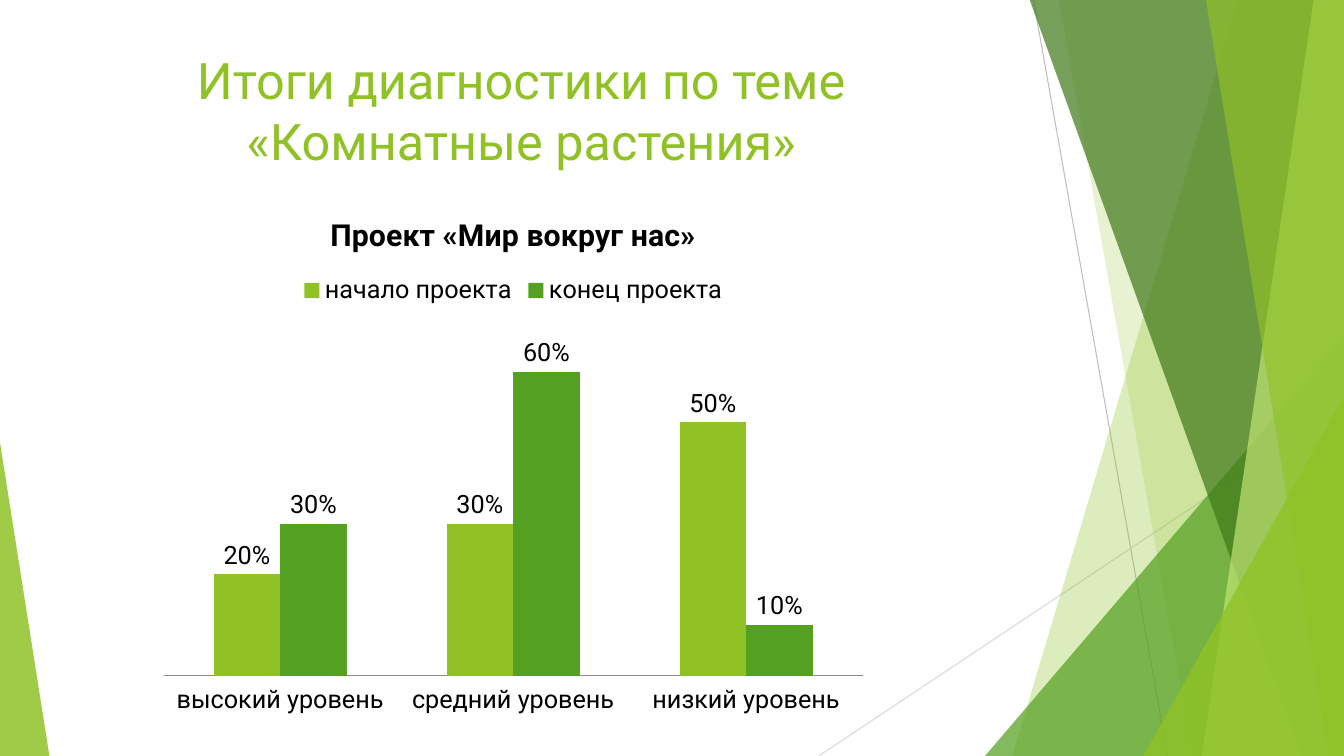
from dataclasses import dataclass

from lxml import etree
from pptx import Presentation
from pptx.chart.data import CategoryChartData
from pptx.dml.color import RGBColor
from pptx.enum.chart import (XL_CHART_TYPE, XL_LABEL_POSITION,
                             XL_LEGEND_POSITION, XL_TICK_LABEL_POSITION,
                             XL_TICK_MARK)
from pptx.enum.shapes import MSO_CONNECTOR, MSO_SHAPE
from pptx.enum.text import MSO_ANCHOR, PP_ALIGN
from pptx.oxml.ns import qn
from pptx.util import Pt

COLUMN = XL_CHART_TYPE.COLUMN_CLUSTERED
OUTSIDE = XL_LABEL_POSITION.OUTSIDE_END
LEGEND_TOP = XL_LEGEND_POSITION.TOP
NO_TICK = XL_TICK_MARK.NONE
LOW = XL_TICK_LABEL_POSITION.LOW
STRAIGHT = MSO_CONNECTOR.STRAIGHT
TRIANGLE = MSO_SHAPE.ISOSCELES_TRIANGLE
TOP = MSO_ANCHOR.TOP
CENTER = PP_ALIGN.CENTER

PX = 9144  # 100 px to the inch
WIDE, HIGH = 1333, 750


@dataclass(frozen=True)
class Theme:
    font: str = "Roboto"
    lime: str = "90C226"
    green: str = "54A021"
    forest: str = "3F7819"
    pale: str = "C0E474"
    black: str = "000000"
    axis: str = "8C8C8C"
    gray: str = "BFBFBF"
    light: str = "D9D9D9"
    title: float = 36
    head: float = 21.6
    body: float = 18
    hair: float = 0.75


THEME = Theme()


def rgb(code):
    return RGBColor.from_string(code)


def style(font, size, color, bold=False):
    font.name, font.size, font.bold = THEME.font, Pt(size), bold
    font.color.rgb = rgb(color)


def write(frame, text, size, color, bold=False, align=CENTER):
    para = frame.paragraphs[0]
    para.alignment = align
    run = para.add_run()
    run.text = text
    style(run.font, size, color, bold)


def paint(shape, color, alpha):
    shape.shadow.inherit = False
    shape.line.fill.background()
    shape.fill.solid()
    shape.fill.fore_color.rgb = rgb(color)
    tint = shape.fill._xPr.find(".//" + qn("a:srgbClr"))
    etree.SubElement(tint, qn("a:alpha"), val=str(alpha * 1000))


def draw_line(slide, start, end, color):
    line = slide.shapes.add_connector(STRAIGHT, *(v * PX for v in start + end))
    line.line.color.rgb = rgb(color)
    line.line.width = Pt(THEME.hair)
    etree.SubElement(line._element.spPr, qn("a:effectLst"))


def draw_band(slide, box, top, foot, color, alpha):
    """Full-height band from a slanted left edge to the right of the box."""
    left, head, width, height = box
    right, base = left + width, head + height
    pen = slide.shapes.build_freeform(left + top, head, scale=PX)
    pen.add_line_segments([(right, head), (right, base), (left + foot, base)])
    paint(pen.convert_to_shape(), color, alpha)


def draw_wedge(slide, box, apex, color, alpha):
    wedge = slide.shapes.add_shape(TRIANGLE, *(v * PX for v in box))
    wedge.adjustments[0] = apex
    paint(wedge, color, alpha)


def add_decor(slide, box):
    left, top, width, height = box
    right, base = left + width, top + height

    def band(*args):
        draw_band(slide, (left, top - 1, width, height + 1), *args)

    def corner(wide, high, color, alpha):
        draw_wedge(slide, (right - wide, base - high, wide, high),
                   1, color, alpha)

    # Thin lines
    draw_line(slide, (left + 48, top), (left + 181, base), THEME.gray)
    draw_line(slide, (right, top + 403), (left - 165, base), THEME.light)
    # Overlapping facets, back to front
    band(251, 27, THEME.lime, 30)
    band(73, 206, THEME.lime, 20)
    corner(356, 417, THEME.green, 72)
    band(44, 314, THEME.forest, 70)
    band(326, 215, THEME.pale, 70)
    band(219, 341, THEME.lime, 65)
    corner(199, 357, THEME.lime, 80)


def add_title(slide, box, text):
    frame = slide.shapes.add_textbox(*(v * PX for v in box)).text_frame
    frame.word_wrap = True
    frame.vertical_anchor = TOP
    write(frame, text, THEME.title, THEME.lime)


def add_graph(slide, box, title, levels, series):
    data = CategoryChartData(number_format="0%")
    data.categories = levels
    for name, values, _ in series:
        data.add_series(name, values)
    chart = slide.shapes.add_chart(COLUMN, *(v * PX for v in box), data).chart
    style(chart.font, THEME.body, THEME.black)

    # Title and legend
    chart.has_title = True
    write(chart.chart_title.text_frame, title, THEME.head, THEME.black,
          bold=True)
    chart.chart_title.include_in_layout = False
    chart.has_legend = True
    chart.legend.position = LEGEND_TOP
    chart.legend.include_in_layout = False

    # Axes
    levels_axis, value_axis = chart.category_axis, chart.value_axis
    levels_axis.major_tick_mark = NO_TICK
    levels_axis.tick_label_position = LOW
    levels_axis.format.line.color.rgb = rgb(THEME.axis)
    levels_axis.format.line.width = Pt(THEME.hair)
    value_axis.minimum_scale, value_axis.maximum_scale = 0, 0.7
    value_axis.has_major_gridlines = False
    value_axis.visible = False

    # Columns and their labels
    plot = chart.plots[0]
    plot.gap_width, plot.overlap, plot.vary_by_categories = 150, 0, False
    for bars, (_, _, color) in zip(plot.series, series):
        bars.format.fill.solid()
        bars.format.fill.fore_color.rgb = rgb(color)
        labels = bars.data_labels
        labels.show_value = True
        labels.number_format = "0%"
        labels.number_format_is_linked = False
        labels.position = OUTSIDE
        style(labels.font, THEME.body, THEME.black)


def main():
    deck = Presentation()
    deck.slide_width, deck.slide_height = WIDE * PX, HIGH * PX
    slide = deck.slides.add_slide(deck.slide_layouts[6])

    add_decor(slide, (977, 0, WIDE - 977, HIGH))
    draw_wedge(slide, (0, 439, 49, HIGH - 439), 0, THEME.lime, 85)
    add_title(slide, (47, 44, 940, 144),
              "Итоги диагностики по теме «Комнатные растения»")
    add_graph(slide, (148, 192, 722, 528), "Проект «Мир вокруг нас»",
              ["высокий уровень", "средний уровень", "низкий уровень"],
              [("начало проекта", (0.2, 0.3, 0.5), THEME.lime),
               ("конец проекта", (0.3, 0.6, 0.1), THEME.green)])
    deck.save("out.pptx")


if __name__ == "__main__":
    main()
